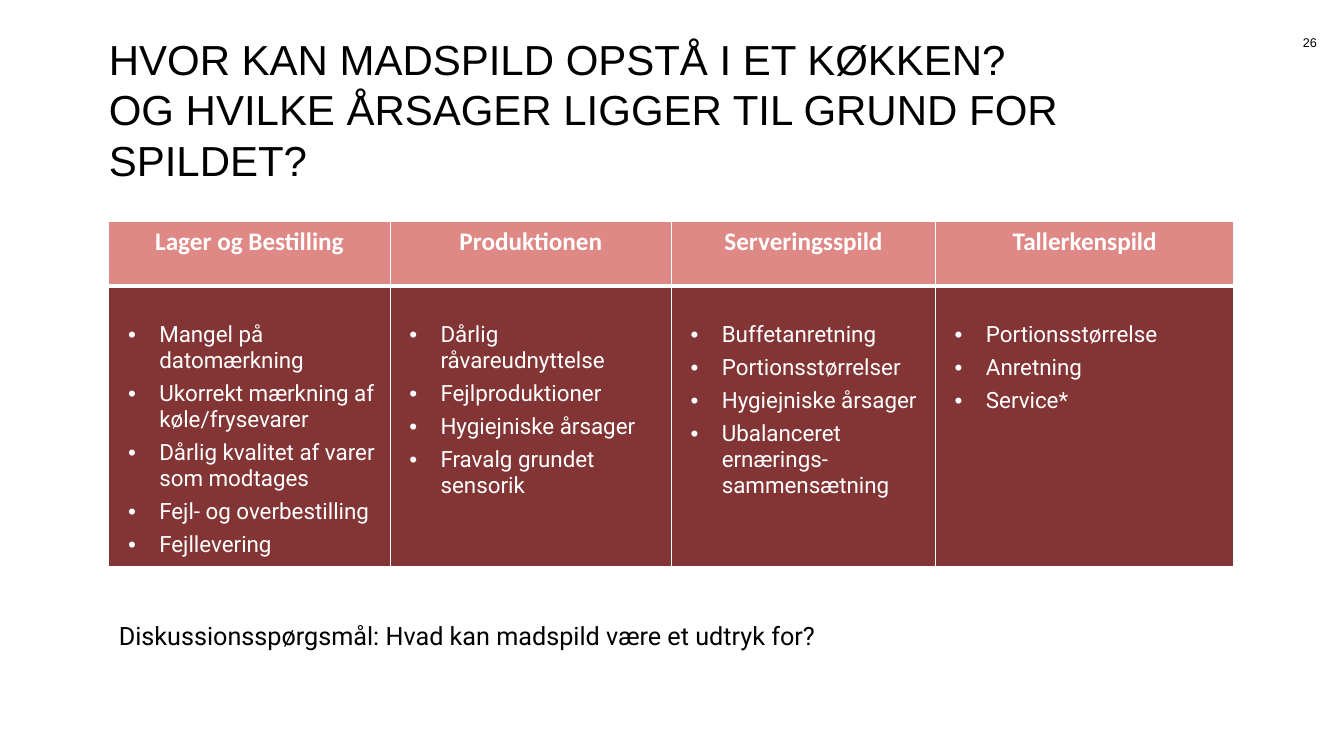
from lxml import etree
from pptx import Presentation
from pptx.dml.color import RGBColor
from pptx.enum.text import MSO_ANCHOR, PP_ALIGN
from pptx.oxml.ns import qn
from pptx.util import Inches, Pt

BLACK = RGBColor(0x00, 0x00, 0x00)
WHITE = RGBColor(0xFF, 0xFF, 0xFF)
ROSE = RGBColor(0xDE, 0x89, 0x86)
MAROON = RGBColor(0x83, 0x34, 0x34)
CENTER, RIGHT = PP_ALIGN.CENTER, PP_ALIGN.RIGHT
TOP, MIDDLE, BOTTOM = MSO_ANCHOR.TOP, MSO_ANCHOR.MIDDLE, MSO_ANCHOR.BOTTOM

TITLE_LINES = [
    "HVOR KAN MADSPILD OPSTÅ I ET KØKKEN?",
    "OG HVILKE ÅRSAGER LIGGER TIL GRUND FOR SPILDET?",
]
WASTE_CAUSES = {
    "Lager og Bestilling": [
        "Mangel på datomærkning",
        "Ukorrekt mærkning af køle/frysevarer",
        "Dårlig kvalitet af varer som modtages",
        "Fejl- og overbestilling",
        "Fejllevering",
    ],
    "Produktionen": [
        "Dårlig råvareudnyttelse",
        "Fejlproduktioner",
        "Hygiejniske årsager",
        "Fravalg grundet sensorik",
    ],
    "Serveringsspild": [
        "Buffetanretning",
        "Portionsstørrelser",
        "Hygiejniske årsager",
        "Ubalanceret ernærings-sammensætning",
    ],
    "Tallerkenspild": ["Portionsstørrelse", "Anretning", "Service*"],
}
COLUMN_WIDTHS = [2.79, 2.79, 2.62, 2.96]
ROW_HEIGHTS = [0.64, 2.75]


def add_run(paragraph, text, font_name, size, color, bold=False):
    """Append one formatted run to a paragraph."""
    run = paragraph.add_run()
    run.text = text
    run.font.name = font_name
    run.font.size = Pt(size)
    run.font.color.rgb = color
    run.font.bold = bold


def add_text_frame(slide, box, anchor):
    """Add a wrapping text box and return its text frame."""
    text_frame = slide.shapes.add_textbox(*map(Inches, box)).text_frame
    text_frame.word_wrap = True
    text_frame.vertical_anchor = anchor
    return text_frame


def add_title(slide, box):
    """Place the heading, one paragraph per line, raised from the box bottom."""
    text_frame = add_text_frame(slide, box, BOTTOM)
    text_frame.margin_left = text_frame.margin_right = text_frame.margin_top = 0
    text_frame.margin_bottom = Inches(0.46)
    for index, line in enumerate(TITLE_LINES):
        paragraph = text_frame.add_paragraph() if index else text_frame.paragraphs[0]
        paragraph.line_spacing = Pt(36)
        add_run(paragraph, line, "Arial", 30, BLACK)


def add_label(slide, box, text, font_name, size, anchor=TOP, alignment=None):
    """Place a single line of text."""
    paragraph = add_text_frame(slide, box, anchor).paragraphs[0]
    paragraph.alignment = alignment
    add_run(paragraph, text, font_name, size, BLACK)


def style_cell(cell, color, bottom_width):
    """Give a cell white borders and a solid fill."""
    properties = cell._tc.get_or_add_tcPr()
    for side, width in (("L", 1), ("R", 1), ("T", 1), ("B", bottom_width)):
        border = etree.SubElement(properties, qn(f"a:ln{side}"), w=str(Pt(width)))
        fill = etree.SubElement(border, qn("a:solidFill"))
        etree.SubElement(fill, qn("a:srgbClr"), val=str(WHITE))
    cell.fill.solid()
    cell.fill.fore_color.rgb = color


def add_bullet(paragraph):
    """Give a paragraph a round bullet with a hanging indent."""
    properties = paragraph._p.get_or_add_pPr()
    properties.set("marL", str(Inches(0.4)))
    properties.set("indent", str(Inches(-0.31)))
    etree.SubElement(properties, qn("a:buFont"), typeface="Arial")
    etree.SubElement(properties, qn("a:buChar"), char="•")


def fill_causes(cell, causes):
    """Write the bulleted causes into a body cell."""
    cell.margin_top, cell.margin_bottom = Inches(0.35), Inches(0.02)
    for index, cause in enumerate(causes):
        paragraph = cell.text_frame.add_paragraph() if index else cell.text_frame.paragraphs[0]
        add_bullet(paragraph)
        paragraph.space_before = Pt(5 if index else 0)
        add_run(paragraph, cause, "Roboto", 16, WHITE)


def add_waste_table(slide, left, top):
    """Place the table of kitchen areas and their causes of waste."""
    box = (left, top, sum(COLUMN_WIDTHS), sum(ROW_HEIGHTS))
    table = slide.shapes.add_table(2, len(WASTE_CAUSES), *map(Inches, box)).table
    for row, height in zip(table.rows, ROW_HEIGHTS):
        row.height = Inches(height)
    for index, (area, causes) in enumerate(WASTE_CAUSES.items()):
        table.columns[index].width = Inches(COLUMN_WIDTHS[index])
        header, body = table.cell(0, index), table.cell(1, index)
        style_cell(header, ROSE, 3)
        style_cell(body, MAROON, 1)
        paragraph = header.text_frame.paragraphs[0]
        paragraph.alignment = CENTER
        add_run(paragraph, area, "Calibri", 18, WHITE, True)
        fill_causes(body, causes)


def main():
    """Build and save the slide."""
    presentation = Presentation()
    presentation.slide_width, presentation.slide_height = Inches(13.33), Inches(7.5)
    slide = presentation.slides.add_slide(presentation.slide_layouts[6])
    add_title(slide, (1.08, 0.69, 10.93, 1.6))
    add_label(slide, (12.42, 0.32, 0.74, 0.2), "26", "Arial", 9, MIDDLE, RIGHT)
    add_waste_table(slide, 1.08, 2.2)
    question = "Diskussionsspørgsmål: Hvad kan madspild være et udtryk for?"
    add_label(slide, (1.08, 6.1, 10.61, 0.4), question, "Roboto", 18)
    presentation.save("out.pptx")


if __name__ == "__main__":
    main()
